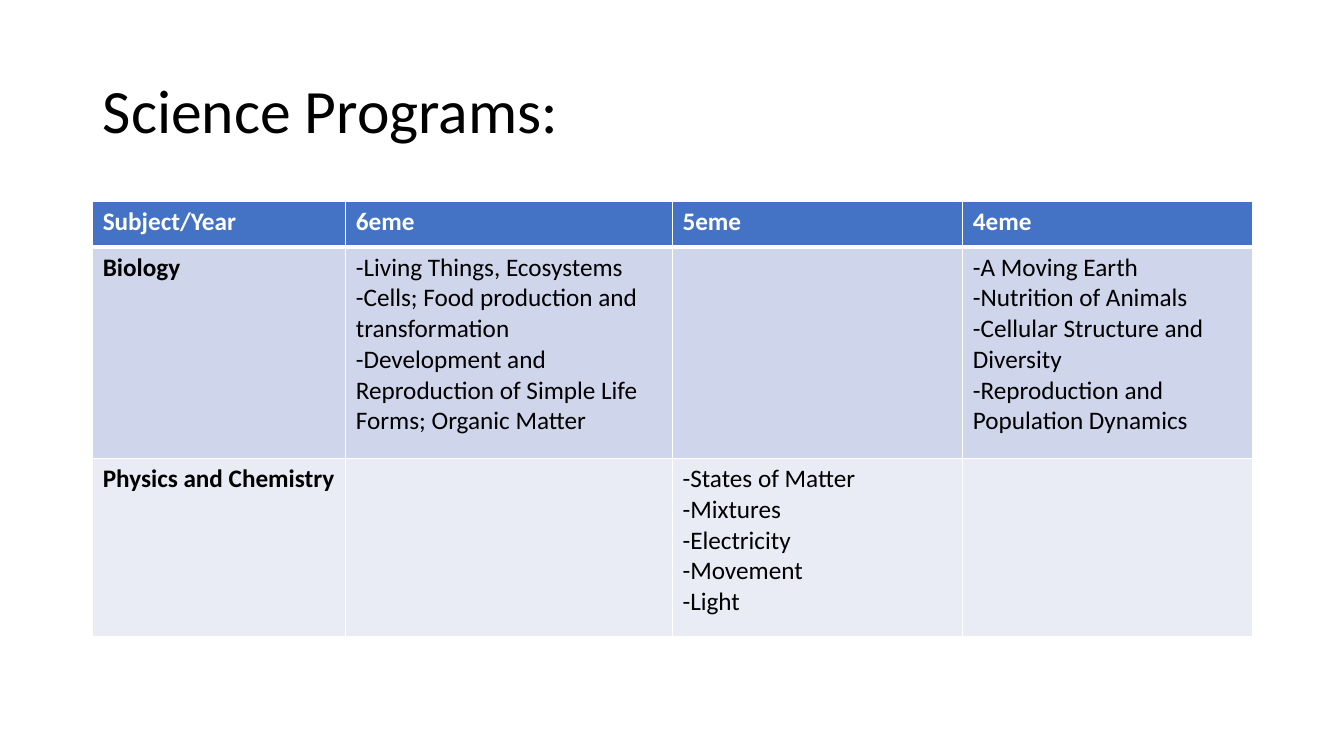
"""Build the science programs slide with its subject and year table."""
from lxml import etree
from pptx import Presentation
from pptx.dml.color import RGBColor
from pptx.enum.text import MSO_ANCHOR, PP_ALIGN
from pptx.oxml.ns import qn
from pptx.util import Pt

PX = 9144
TITLE_ONLY = 5
LEFT = PP_ALIGN.LEFT
MIDDLE = MSO_ANCHOR.MIDDLE
FONT = "Calibri"
WHITE, BLACK = "FFFFFF", "000000"
ROW_FILLS = ["4472C4", "CFD5EA", "E9EBF5"]
ROW_HEIGHTS = [45, 210, 177]
COLUMN_WIDTHS = [251, 324, 288, 287]
PROGRAMS = [
    ["Subject/Year", "6eme", "5eme", "4eme"],
    [
        "Biology",
        "-Living Things, Ecosystems\n"
        "-Cells; Food production and transformation\n"
        "-Development and Reproduction of Simple Life Forms; Organic Matter",
        "",
        "-A Moving Earth\n-Nutrition of Animals\n"
        "-Cellular Structure and Diversity\n"
        "-Reproduction and Population Dynamics",
    ],
    [
        "Physics and Chemistry",
        "",
        "-States of Matter\n-Mixtures\n-Electricity\n-Movement\n-Light",
        "",
    ],
]


def px(length):
    """Turn a length in px into EMU."""
    return length * PX


def color(value):
    """Turn a hex string into a colour."""
    return RGBColor.from_string(value)


def format_text(frame, size, text_color, bold=False):
    """Give every run in a text frame its font."""
    for paragraph in frame.paragraphs:
        for run in paragraph.runs:
            run.font.name = FONT
            run.font.size = Pt(size)
            run.font.bold = bold
            run.font.color.rgb = color(text_color)


def add_border(cell, side, width):
    """Draw one white side of a cell, with its width in points."""
    line = etree.SubElement(
        cell._tc.get_or_add_tcPr(), qn(f"a:ln{side}"), w=str(Pt(width))
    )
    fill = etree.SubElement(line, qn("a:solidFill"))
    etree.SubElement(fill, qn("a:srgbClr"), val=WHITE)


def fill_cell(cell, text, row, column):
    """Write and format one cell by its place in the table."""
    is_header = row == 0
    cell.text = text
    format_text(cell.text_frame, 18, WHITE if is_header else BLACK,
                is_header or column == 0)
    widths = {"L": 1, "R": 1, "T": 3 if row == 1 else 1,
              "B": 3 if is_header else 1}
    for side, width in widths.items():
        add_border(cell, side, width)
    cell.fill.solid()
    cell.fill.fore_color.rgb = color(ROW_FILLS[row])


def set_title(slide, text):
    """Place and format the slide title."""
    title = slide.shapes.title
    title.left, title.top = px(92), px(40)
    title.width, title.height = px(1150), px(145)
    frame = title.text_frame
    frame.text = text
    frame.vertical_anchor = MIDDLE
    frame.paragraphs[0].alignment = LEFT
    frame.paragraphs[0].line_spacing = 0.9
    format_text(frame, 44, BLACK)


def add_programs(slide):
    """Add the table of subjects by year."""
    table = slide.shapes.add_table(
        len(PROGRAMS), len(COLUMN_WIDTHS), px(92), px(200),
        px(sum(COLUMN_WIDTHS)), px(sum(ROW_HEIGHTS)),
    ).table
    for column, width in zip(table.columns, COLUMN_WIDTHS):
        column.width = px(width)
    for row, height in zip(table.rows, ROW_HEIGHTS):
        row.height = px(height)
    for row, subject in enumerate(PROGRAMS):
        for column, text in enumerate(subject):
            fill_cell(table.cell(row, column), text, row, column)


def main():
    """Build and save the slide."""
    deck = Presentation()
    deck.slide_width, deck.slide_height = px(1333), px(750)
    slide = deck.slides.add_slide(deck.slide_layouts[TITLE_ONLY])
    set_title(slide, "Science Programs:")
    add_programs(slide)
    deck.save("out.pptx")


if __name__ == "__main__":
    main()
